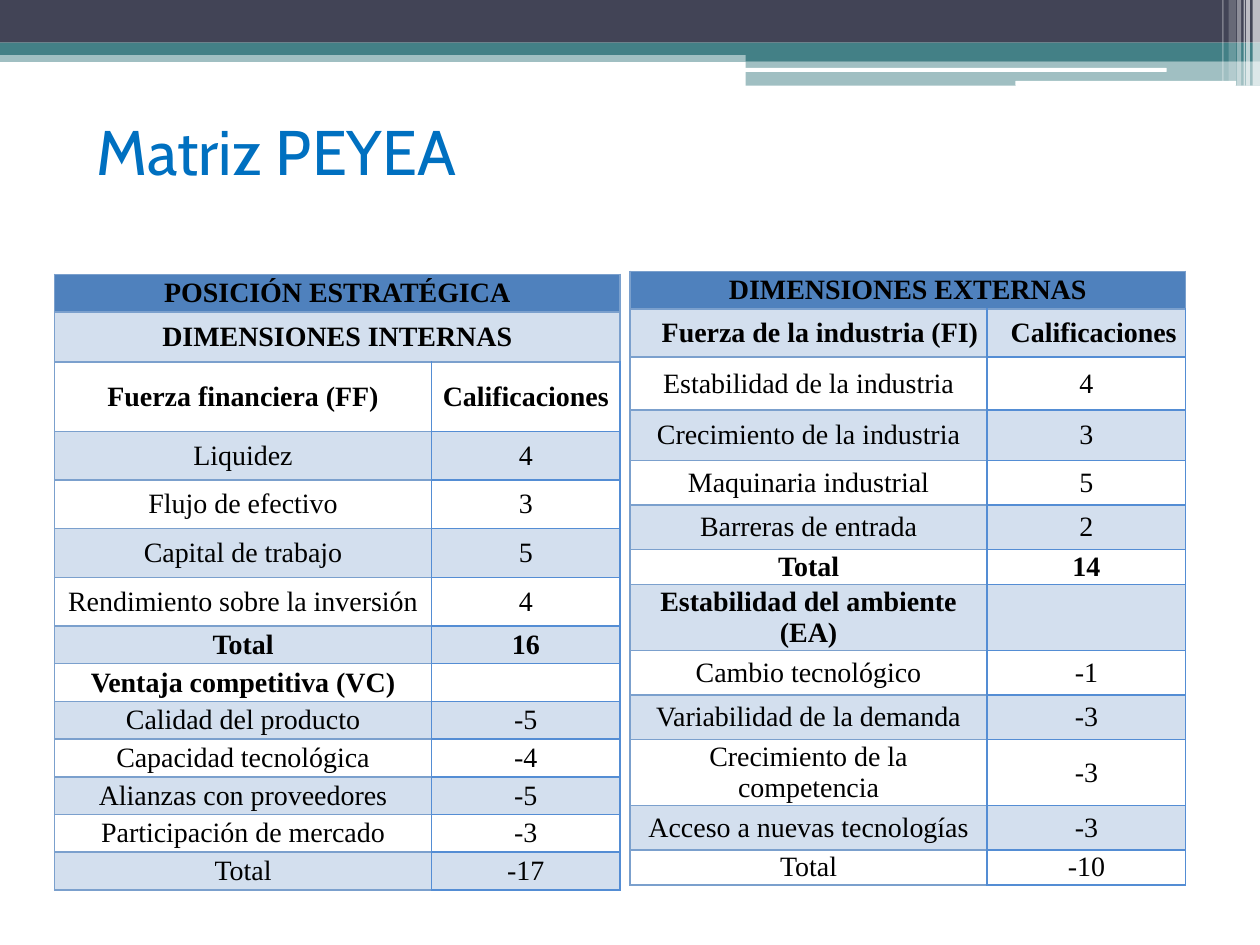
from dataclasses import dataclass

from lxml.etree import SubElement
from pptx import Presentation
from pptx.dml.color import RGBColor
from pptx.enum.shapes import MSO_SHAPE as Shape
from pptx.enum.text import MSO_ANCHOR as Anchor, PP_ALIGN as Align
from pptx.oxml.ns import qn
from pptx.util import Cm, Pt


@dataclass(frozen=True)
class Theme:
    """Colours, fonts and type sizes of the slide."""
    white: str = "FFFFFF"
    dark: str = "424456"
    teal: str = "438086"
    title: str = "0070C0"
    text: str = "000000"
    header: str = "4F81BD"
    band: str = "D3DFEE"
    edge: str = "7BA0CD"
    value_edge: str = "548DD4"
    title_font: str = "Cabin"
    table_font: str = "Times New Roman"
    title_size: int = 36
    table_size: int = 16
    edge_width: int = 1


THEME = Theme()

BARS = [
    (0, 1.02, 25.4, 0.23, THEME.teal, 50),
    (0, 0, 25.4, 0.86, THEME.dark, 100),
    (0, 0.86, 25.4, 0.25, THEME.teal, 100),
    (15.03, 0.99, 10.37, 0.24, THEME.teal, 100),
    (15.03, 1.23, 10.37, 0.5, THEME.teal, 50),
]
ROUNDED_BARS = [
    (15.01, 1.37, 8.51, 0.08, THEME.white, 100),
    (20.47, 1.63, 4.45, 0.1, THEME.white, 100),
]
STRIPES = [
    (25.25, 0.15, 1.73, 65),
    (25.12, 0.08, 1.73, 65),
    (25.07, 0.03, 1.73, 60),
    (24.94, 0.08, 1.73, 40),
    (24.77, 0.15, 1.63, 20),
    (24.64, 0.03, 1.63, 30),
]

INTERNAL = [
    ("POSICIÓN ESTRATÉGICA", None, 0.76, True),
    ("DIMENSIONES INTERNAS", None, 1.01, True),
    ("Fuerza financiera (FF)", "Calificaciones", 1.4, True),
    ("Liquidez", "4", 0.98, False),
    ("Flujo de efectivo", "3", 0.98, False),
    ("Capital de trabajo", "5", 0.98, False),
    ("Rendimiento sobre la inversión", "4", 0.98, False),
    ("Total", "16", 0.76, True),
    ("Ventaja competitiva (VC)", "", 0.76, True),
    ("Calidad del producto", "-5", 0.76, False),
    ("Capacidad tecnológica", "-4", 0.76, False),
    ("Alianzas con proveedores", "-5", 0.76, False),
    ("Participación de mercado", "-3", 0.76, False),
    ("Total", "-17", 0.76, False),
]
EXTERNAL = [
    ("DIMENSIONES EXTERNAS", None, 0.76, True),
    ("Fuerza de la industria (FI)", "Calificaciones", 0.97, True),
    ("Estabilidad de la industria", "4", 1.07, False),
    ("Crecimiento de la industria", "3", 1.01, False),
    ("Maquinaria industrial", "5", 0.9, False),
    ("Barreras de entrada", "2", 0.9, False),
    ("Total", "14", 0.7, True),
    ("Estabilidad del ambiente (EA)", "", 1.33, True),
    ("Cambio tecnológico", "-1", 0.9, False),
    ("Variabilidad de la demanda", "-3", 0.9, False),
    ("Crecimiento de la competencia", "-3", 1.33, False),
    ("Acceso a nuevas tecnologías", "-3", 0.9, False),
    ("Total", "-10", 0.7, False),
]


def add_span(para, text, font, size, color, bold=False):
    """Add one formatted run to a paragraph."""
    span = para.add_run()
    span.text = text
    span.font.name = font
    span.font.size = Pt(size)
    span.font.bold = bold
    span.font.color.rgb = RGBColor.from_string(color)


def add_bar(page, kind, box, color, opacity):
    """Add a borderless bar with the given opacity in percent."""
    bar = page.shapes.add_shape(kind, *map(Cm, box))
    bar.shadow.inherit = False
    bar.line.fill.background()
    bar.fill.solid()
    bar.fill.fore_color.rgb = RGBColor.from_string(color)
    if opacity < 100:
        tint = bar.fill._xPr.find(qn("a:solidFill"))[0]
        SubElement(tint, qn("a:alpha"), val=str(opacity * 1000))


def add_banner(page, left, top):
    """Draw the layered band across the top of the page."""
    for kind, bars in ((Shape.RECTANGLE, BARS), (Shape.ROUNDED_RECTANGLE, ROUNDED_BARS)):
        for x, y, width, height, color, opacity in bars:
            add_bar(page, kind, (left + x, top + y, width, height), color, opacity)
    for x, width, height, opacity in STRIPES:
        add_bar(page, Shape.RECTANGLE, (left + x, top, width, height), THEME.white, opacity)


def add_title(page, box, text):
    """Place and format the title placeholder."""
    title = page.shapes.title
    title.left, title.top, title.width, title.height = map(Cm, box)
    title.text_frame.vertical_anchor = Anchor.MIDDLE
    para = title.text_frame.paragraphs[0]
    para.alignment = Align.LEFT
    add_span(para, text, THEME.title_font, THEME.title_size, THEME.title)


def set_borders(cell, **colors):
    """Give a cell its four edges, keyed L, R, T and B."""
    props = cell._tc.get_or_add_tcPr()
    for side, color in colors.items():
        line = SubElement(props, qn(f"a:ln{side}"), w=str(Pt(THEME.edge_width)))
        fill = SubElement(line, qn("a:solidFill"))
        SubElement(fill, qn("a:srgbClr"), val=color)


def fill_cell(cell, text, bold, align, color):
    """Write a cell's text and set its margins and fill."""
    cell.vertical_anchor = Anchor.MIDDLE
    cell.margin_left = cell.margin_right = Cm(0.18)
    cell.margin_top = cell.margin_bottom = 0
    if color:
        cell.fill.solid()
        cell.fill.fore_color.rgb = RGBColor.from_string(color)
    else:
        cell.fill.background()
    para = cell.text_frame.paragraphs[0]
    para.alignment = align
    add_span(para, text, THEME.table_font, THEME.table_size, THEME.text, bold)


def add_matrix(page, left, top, widths, rows, heading_align):
    """Add a banded table of factors and their ratings."""
    height = sum(row[2] for row in rows)
    frame = page.shapes.add_table(
        len(rows), len(widths), Cm(left), Cm(top), Cm(sum(widths)), Cm(height))
    table = frame.table
    table.first_row = table.horz_banding = False
    for column, width in zip(table.columns, widths):
        column.width = Cm(width)
    below_header = False
    for index, (label, value, row_height, bold) in enumerate(rows):
        table.rows[index].height = Cm(row_height)
        label_cell, value_cell = table.cell(index, 0), table.cell(index, 1)
        header = value is None
        inner = THEME.edge if header else THEME.value_edge
        upper = THEME.edge if header or below_header else inner
        set_borders(label_cell, L=THEME.edge, R=inner, T=THEME.edge, B=THEME.edge)
        set_borders(value_cell, L=inner, R=inner, T=upper, B=inner)
        color = THEME.header if index == 0 else THEME.band if index % 2 else None
        align = heading_align if below_header and not header else Align.CENTER
        fill_cell(label_cell, label, bold, align, color)
        if header:
            label_cell.merge(value_cell)
        else:
            fill_cell(value_cell, value, bold, align, color)
        below_header = header


def main():
    """Build the deck and save it."""
    deck = Presentation()
    deck.slide_width, deck.slide_height = Cm(25.4), Cm(19.05)
    page = deck.slides.add_slide(deck.slide_layouts[5])
    add_banner(page, 0, 0)
    add_title(page, (1.7, 2.13, 22.86, 1.8), "Matriz PEYEA")
    add_matrix(page, 1.1, 5.53, (7.6, 3.8), INTERNAL, Align.CENTER)
    add_matrix(page, 12.7, 5.47, (7.2, 4), EXTERNAL, Align.RIGHT)
    deck.save("out.pptx")


if __name__ == "__main__":
    main()
